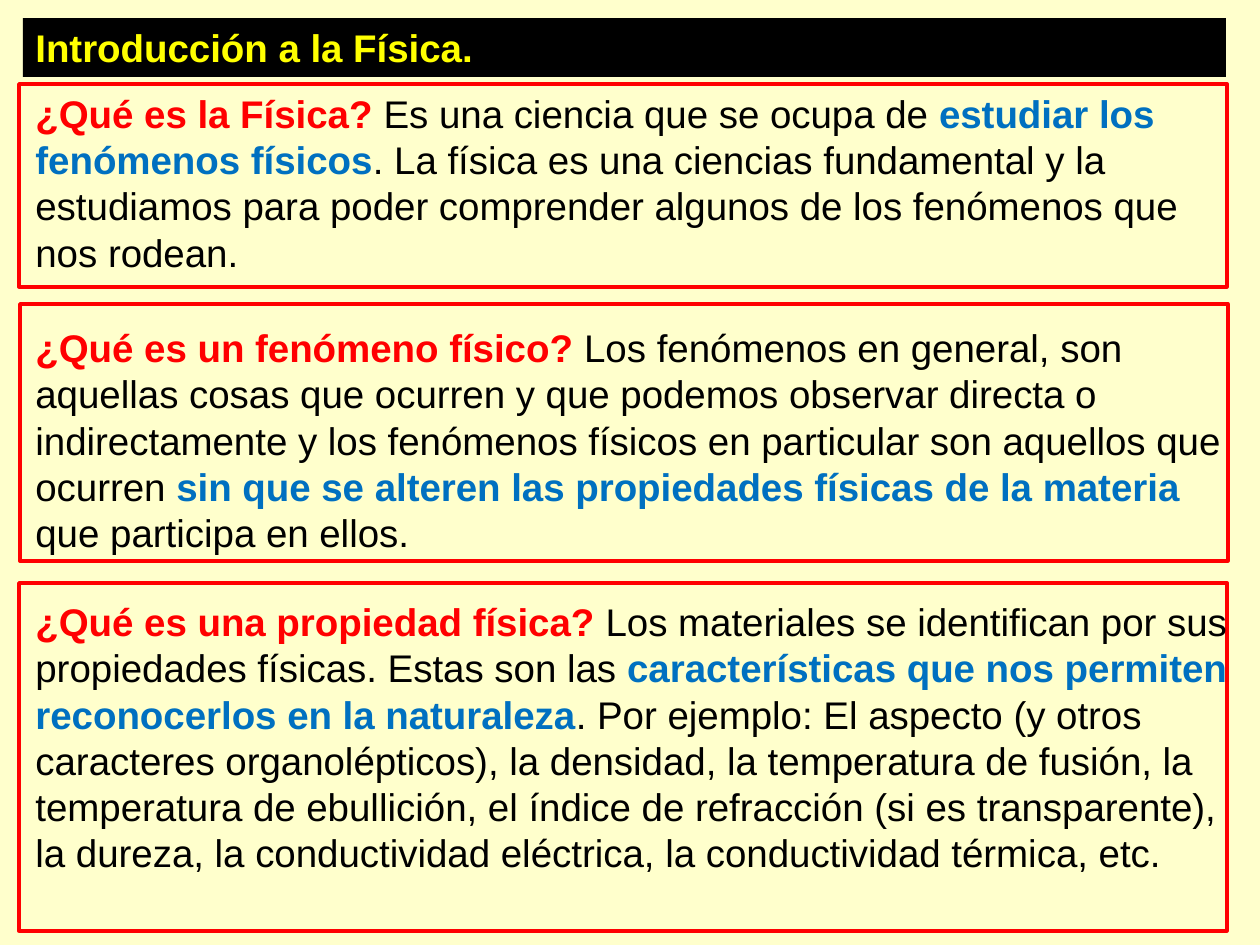
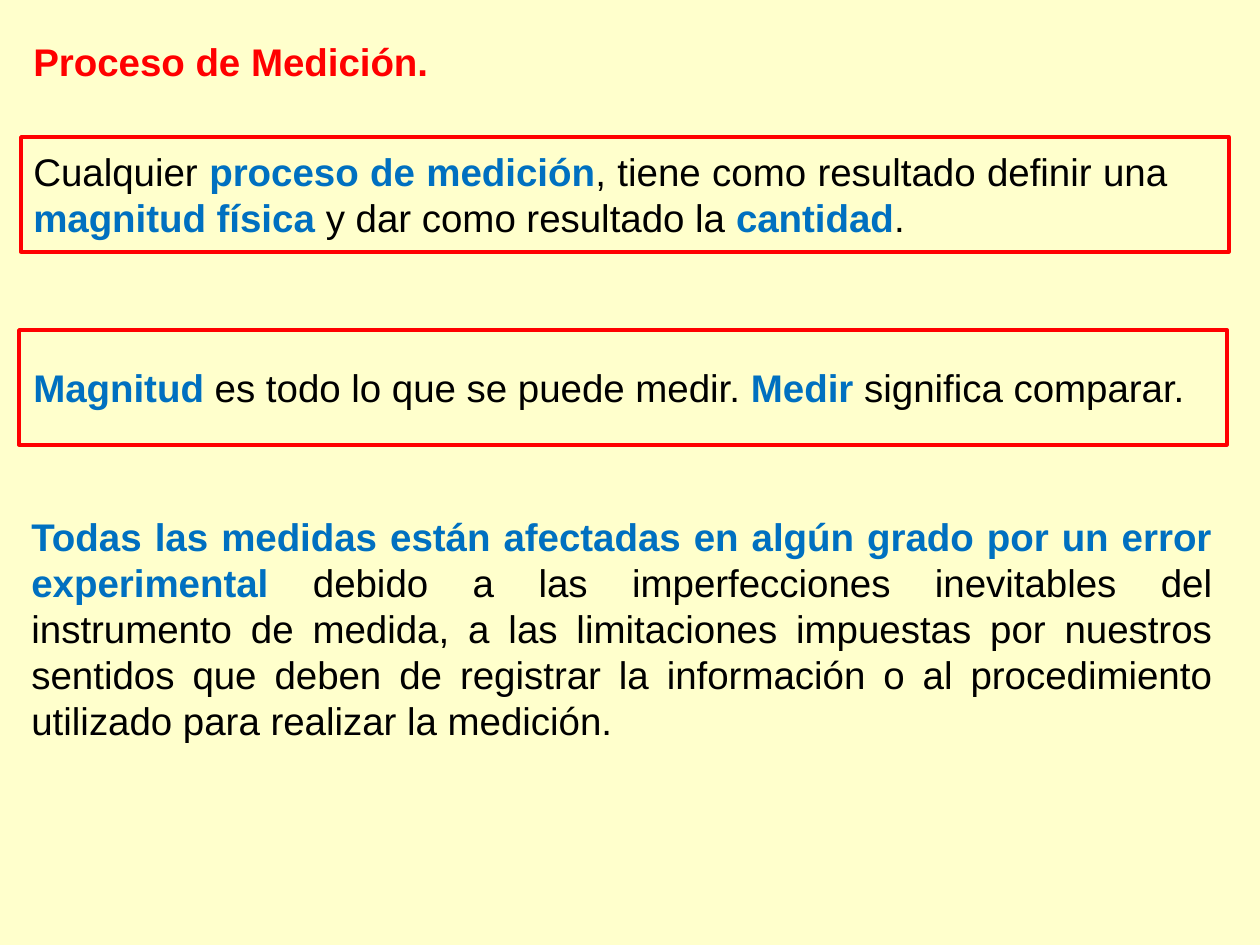
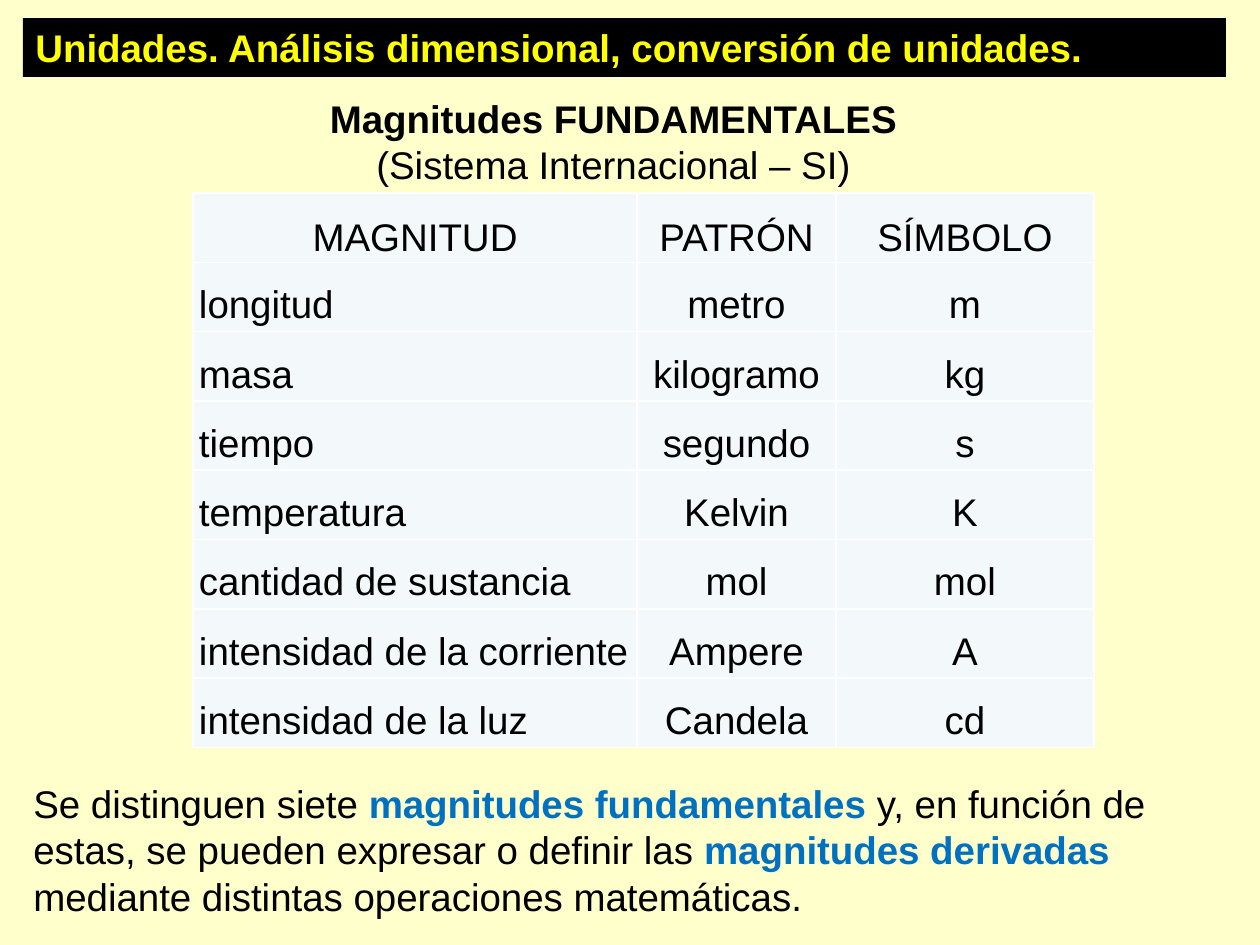
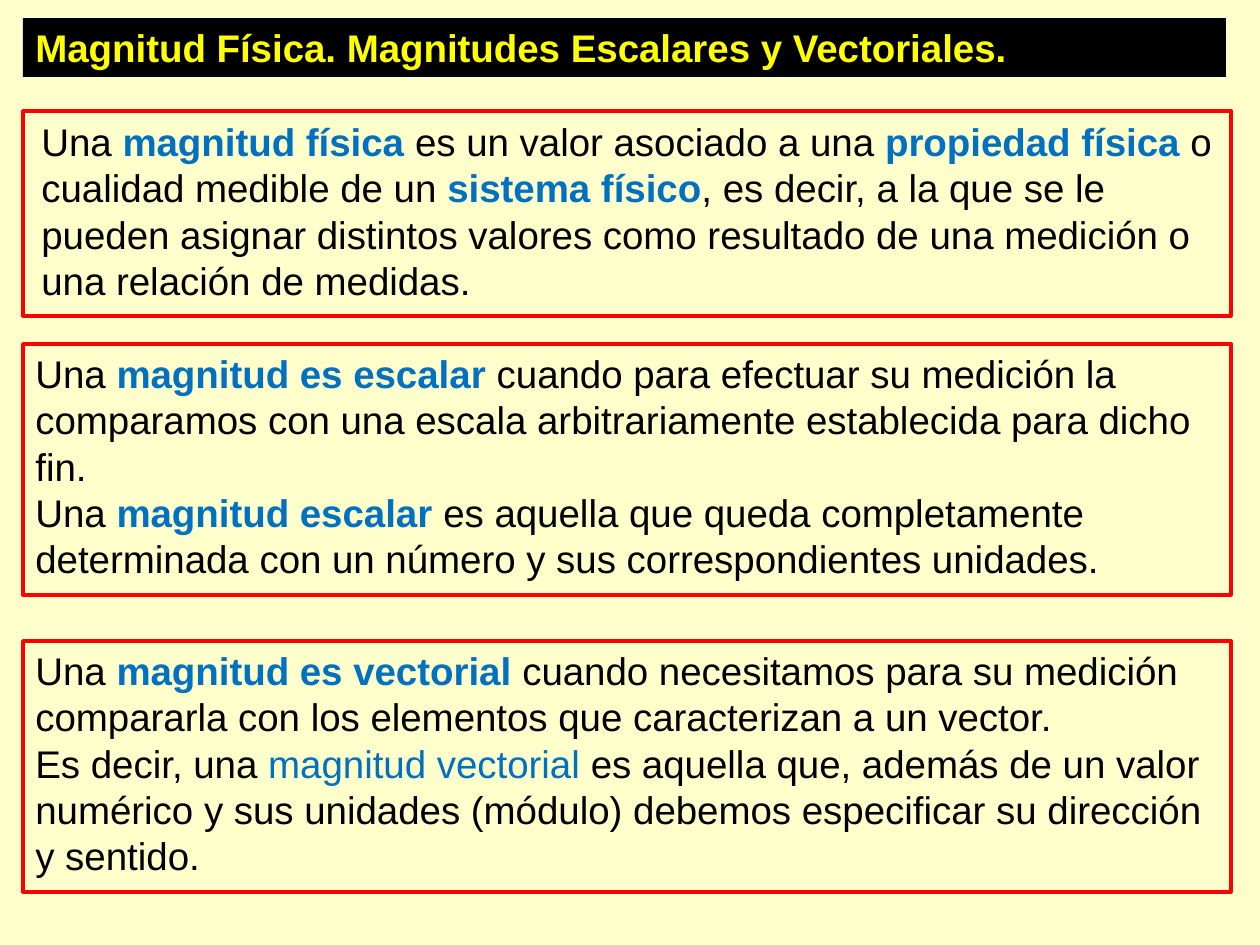
import pptx
import pptx.dml.color
import pptx.enum.shapes
import pptx.enum.text
import pptx.oxml
import pptx.oxml.ns
import pptx.util

EMU_PER_PX = 914400 // 126
COLORS = {
    "background": "FFFFCC",
    "black": "000000",
    "red": "FF0000",
    "blue": "0070C0",
    "yellow": "FFFF00",
    "cell": "F3F9FA",
    "border": "FFFFFF",
}
# Each text style is a colour name and whether it is bold.
STYLES = {
    "body": ("black", False),
    "strong": ("black", True),
    "key": ("blue", True),
    "soft key": ("blue", False),
    "question": ("red", True),
    "band": ("yellow", True),
}
FONT_NAME = "Arial"
FONT_SIZE = pptx.util.Pt(22)
BAND_BOX = (23, 18, 1203, 59)
FRAME_WIDTH = 1208

ALIGN = pptx.enum.text.PP_ALIGN
ANCHOR = pptx.enum.text.MSO_ANCHOR
RECTANGLE = pptx.enum.shapes.MSO_SHAPE.RECTANGLE


def color(name):
    return pptx.dml.color.RGBColor.from_string(COLORS[name])


def write(text_frame, paragraphs, align):
    """Fill a text frame with paragraphs, each a list of (style, text) spans."""
    text_frame.word_wrap = True
    for index, spans in enumerate(paragraphs):
        para = text_frame.add_paragraph() if index else text_frame.paragraphs[0]
        para.alignment = align
        para.font.name = FONT_NAME
        para.font.size = FONT_SIZE
        for style, text in spans:
            color_name, bold = STYLES[style]
            span = para.add_run()
            span.text = text
            span.font.bold = bold
            span.font.color.rgb = color(color_name)


# Frames are (left, top, height); texts are (box, alignment, anchor, paragraphs).
PAGES = [
    {
        "band": "Introducción a la Física.",
        "frames": [(19, 84, 203), (20, 304, 257), (19, 583, 348)],
        "texts": [
            ((23, 84, 1217, 199), ALIGN.LEFT, ANCHOR.TOP, [[
                ("question", "¿Qué es la Física? "),
                ("body", "Es una ciencia que se ocupa de "),
                ("key", "estudiar los fenómenos físicos"),
                ("body", ". La física es una ciencias fundamental y la estudiamos para poder "
                         "comprender algunos de los fenómenos que nos rodean."),
            ]]),
            ((23, 318, 1217, 246), ALIGN.LEFT, ANCHOR.TOP, [[
                ("question", "¿Qué es un fenómeno físico? "),
                ("body", "Los fenómenos en general, son aquellas cosas que ocurren y que "
                         "podemos observar directa o indirectamente y los fenómenos físicos "
                         "en particular son aquellos que ocurren "),
                ("key", "sin que se alteren las propiedades físicas de la materia "),
                ("body", "que participa en ellos."),
            ]]),
            ((23, 592, 1217, 339), ALIGN.LEFT, ANCHOR.TOP, [[
                ("question", "¿Qué es una propiedad física? "),
                ("body", "Los materiales se identifican por sus propiedades físicas. "
                         "Estas son las "),
                ("key", "características que nos permiten reconocerlos en la naturaleza"),
                ("body", ". Por ejemplo: El aspecto (y otros caracteres organolépticos), la "
                         "densidad, la temperatura de fusión, la temperatura de ebullición, "
                         "el índice de refracción (si es transparente), la dureza, la "
                         "conductividad eléctrica, la conductividad térmica, etc."),
            ]]),
        ],
    },
    {
        "band": None,
        "frames": [(21, 137, 115), (19, 330, 115)],
        "texts": [
            ((21, 32, 1203, 59), ALIGN.LEFT, ANCHOR.TOP, [[
                ("question", "Proceso de Medición."),
            ]]),
            ((21, 141, 1159, 106), ALIGN.JUSTIFY, ANCHOR.MIDDLE, [[
                ("body", "Cualquier "),
                ("key", "proceso de medición"),
                ("body", ", tiene como resultado definir una "),
                ("key", "magnitud física "),
                ("body", "y dar como resultado la "),
                ("key", "cantidad"),
                ("body", "."),
            ]]),
            ((21, 358, 1239, 59), ALIGN.LEFT, ANCHOR.TOP, [[
                ("key", "Magnitud"),
                ("body", " es todo lo que se puede medir. "),
                ("key", "Medir "),
                ("body", "significa comparar."),
            ]]),
            ((19, 505, 1206, 246), ALIGN.JUSTIFY, ANCHOR.MIDDLE, [[
                ("key", "Todas las medidas están afectadas en algún grado por un error "
                        "experimental"),
                ("body", " debido a las imperfecciones inevitables del instrumento de medida, "
                         "a las limitaciones impuestas por nuestros sentidos que deben de "
                         "registrar la información o al procedimiento utilizado para "
                         "realizar la medición."),
            ]]),
        ],
    },
    {
        "band": "Unidades. Análisis dimensional, conversión de unidades.",
        "frames": [],
        "texts": [
            ((246, 89, 735, 106), ALIGN.CENTER, ANCHOR.TOP, [
                [("strong", "Magnitudes FUNDAMENTALES")],
                [("body", "(Sistema Internacional – SI)")],
            ]),
            ((21, 774, 1237, 152), ALIGN.LEFT, ANCHOR.TOP, [[
                ("body", "Se distinguen siete "),
                ("key", "magnitudes fundamentales "),
                ("body", "y, en función de estas, se pueden expresar o definir las "),
                ("key", "magnitudes derivadas "),
                ("body", "mediante distintas operaciones matemáticas."),
            ]]),
        ],
    },
    {
        "band": "Magnitud Física. Magnitudes Escalares y Vectoriales.",
        "frames": [(23, 111, 205), (23, 344, 251), (23, 641, 251)],
        "texts": [
            ((29, 112, 1203, 199), ALIGN.LEFT, ANCHOR.TOP, [[
                ("body", "Una "),
                ("key", "magnitud física"),
                ("body", " es un valor asociado a una "),
                ("key", "propiedad física"),
                ("body", " o cualidad medible de un "),
                ("key", "sistema físico"),
                ("body", ", es decir, a la que se le pueden asignar distintos valores como "
                         "resultado de una medición o una relación de medidas."),
            ]]),
            ((23, 344, 1203, 246), ALIGN.LEFT, ANCHOR.TOP, [
                [
                    ("body", "Una "),
                    ("key", "magnitud es escalar "),
                    ("body", "cuando para efectuar su medición la comparamos con una escala "
                             "arbitrariamente establecida para dicho fin."),
                ],
                [
                    ("body", "Una "),
                    ("key", "magnitud escalar"),
                    ("body", " es aquella que queda completamente determinada con un número y "
                             "sus correspondientes unidades."),
                ],
            ]),
            ((23, 641, 1203, 246), ALIGN.LEFT, ANCHOR.TOP, [
                [
                    ("body", "Una "),
                    ("key", "magnitud es vectorial "),
                    ("body", "cuando necesitamos para su medición compararla con los elementos "
                             "que caracterizan a un vector."),
                ],
                [
                    ("body", "Es decir, una "),
                    ("soft key", "magnitud vectorial"),
                    ("body", " es aquella que, además de un valor numérico y sus unidades "
                             "(módulo) debemos especificar su dirección y sentido."),
                ],
            ]),
        ],
    },
]

UNITS = [
    ("MAGNITUD", "PATRÓN", "SÍMBOLO"),
    ("longitud", "metro", "m"),
    ("masa", "kilogramo", "kg"),
    ("tiempo", "segundo", "s"),
    ("temperatura", "Kelvin", "K"),
    ("cantidad de sustancia", "mol", "mol"),
    ("intensidad de la corriente", "Ampere", "A"),
    ("intensidad de la luz", "Candela", "cd"),
]
COLUMN_WIDTHS = (444, 199, 258)
ROW_HEIGHT = 69
CELL_MARGIN = 6

deck = pptx.Presentation()
deck.slide_width = pptx.util.Inches(10)
deck.slide_height = pptx.util.Inches(7.5)
blank_layout = deck.slide_layouts[6]

for content in PAGES:
    page = deck.slides.add_slide(blank_layout)
    page.background.fill.solid()
    page.background.fill.fore_color.rgb = color("background")

    for left, top, height in content["frames"]:
        box = (left, top, FRAME_WIDTH, height)
        frame = page.shapes.add_shape(RECTANGLE, *(px * EMU_PER_PX for px in box))
        frame.shadow.inherit = False
        frame.fill.background()
        frame.line.color.rgb = color("red")
        frame.line.width = pptx.util.Pt(2)

    for box, align, anchor, paragraphs in content["texts"]:
        text_box = page.shapes.add_textbox(*(px * EMU_PER_PX for px in box))
        text_box.text_frame.vertical_anchor = anchor
        write(text_box.text_frame, paragraphs, align)

    if content["band"]:
        band = page.shapes.add_shape(RECTANGLE, *(px * EMU_PER_PX for px in BAND_BOX))
        band.shadow.inherit = False
        band.fill.solid()
        band.fill.fore_color.rgb = color("black")
        band.line.fill.background()
        band.text_frame.vertical_anchor = ANCHOR.TOP
        write(band.text_frame, [[("band", content["band"])]], ALIGN.LEFT)

# Table of base units on the third page
table_box = (193, 193, sum(COLUMN_WIDTHS), ROW_HEIGHT * len(UNITS))
table = deck.slides[2].shapes.add_table(
    len(UNITS), len(COLUMN_WIDTHS), *(px * EMU_PER_PX for px in table_box)).table
for column, width in zip(table.columns, COLUMN_WIDTHS):
    column.width = width * EMU_PER_PX
for row_index, labels in enumerate(UNITS):
    table.rows[row_index].height = ROW_HEIGHT * EMU_PER_PX
    for column_index, label in enumerate(labels):
        cell = table.cell(row_index, column_index)
        cell.margin_left = cell.margin_right = CELL_MARGIN * EMU_PER_PX
        cell.margin_top = cell.margin_bottom = 0
        cell.vertical_anchor = ANCHOR.TOP if row_index else ANCHOR.MIDDLE
        is_name = row_index > 0 and column_index == 0
        write(cell.text_frame, [[("body", label)]],
              ALIGN.JUSTIFY if is_name else ALIGN.CENTER)
        cell.text_frame.paragraphs[0].line_spacing = 1.5
        cell_properties = cell._tc.get_or_add_tcPr()
        for side in ("lnL", "lnR", "lnT", "lnB"):
            cell_properties.append(pptx.oxml.parse_xml(
                f'<a:{side} {pptx.oxml.ns.nsdecls("a")} w="12700"><a:solidFill>'
                f'<a:srgbClr val="{COLORS["border"]}"/></a:solidFill></a:{side}>'))
        cell.fill.solid()
        cell.fill.fore_color.rgb = color("cell")

deck.save("out.pptx")
